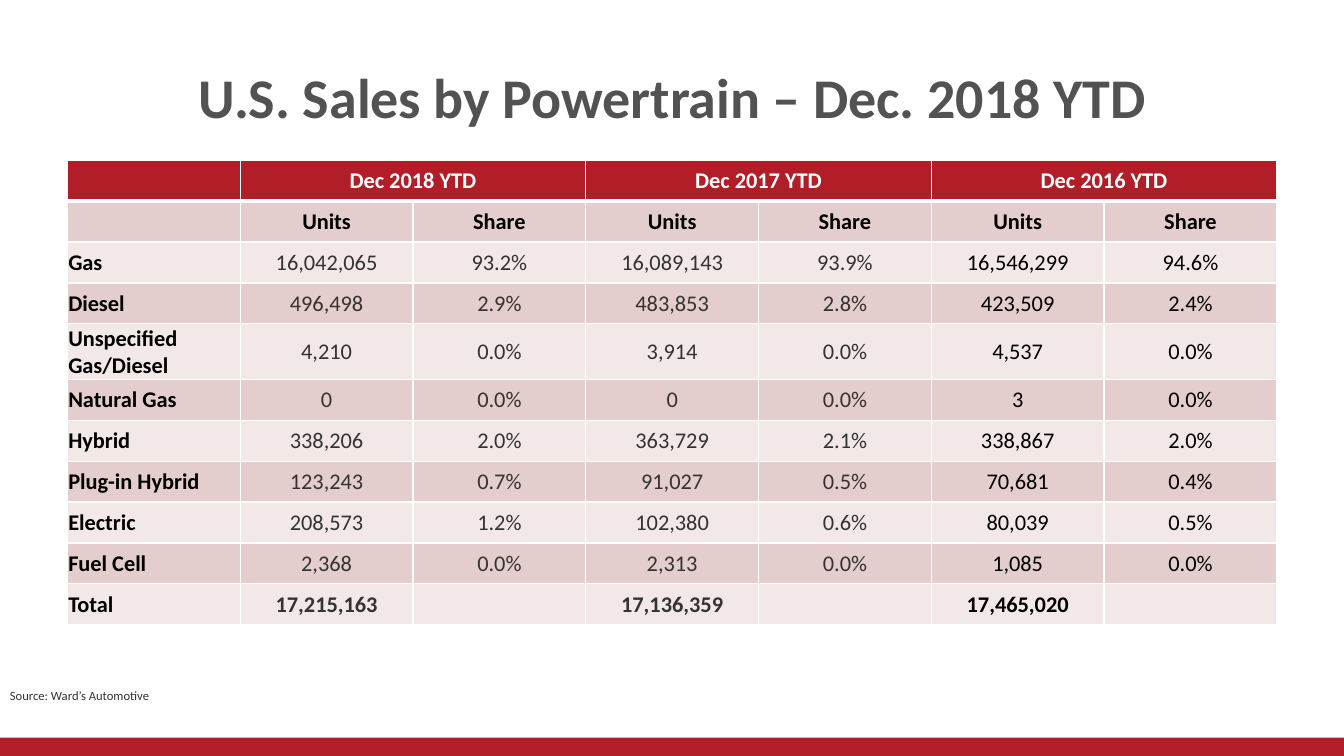
import dataclasses

import lxml.etree
import pptx
import pptx.dml.color
import pptx.enum.shapes
import pptx.enum.text
import pptx.oxml.ns
import pptx.slide
import pptx.table
import pptx.text.text
import pptx.util
from pptx.util import Cm

ALIGN = pptx.enum.text.PP_ALIGN
ANCHOR = pptx.enum.text.MSO_ANCHOR


@dataclasses.dataclass(frozen=True)
class Theme:
    font: str = "Calibri"
    red: str = "B21E28"
    dark_band: str = "E4CDCD"
    light_band: str = "F2E8E8"
    white: str = "FFFFFF"
    black: str = "000000"
    grey: str = "343333"
    title_grey: str = "525252"
    title_size: int = 40
    table_size: int = 16
    source_size: int = 9
    rule: int = 1
    header_rule: int = 3


@dataclasses.dataclass(frozen=True)
class Powertrain:
    name: str
    figures: tuple[str, ...]
    total: bool = False


THEME = Theme()
YEARS = ("Dec 2018 YTD", "Dec 2017 YTD", "Dec 2016 YTD")
MEASURES = ("Units", "Share")
POWERTRAINS = (
    Powertrain("Gas", ("16,042,065", "93.2%", "16,089,143", "93.9%", "16,546,299", "94.6%")),
    Powertrain("Diesel", ("496,498", "2.9%", "483,853", "2.8%", "423,509", "2.4%")),
    Powertrain("Unspecified Gas/Diesel", ("4,210", "0.0%", "3,914", "0.0%", "4,537", "0.0%")),
    Powertrain("Natural Gas", ("0", "0.0%", "0", "0.0%", "3", "0.0%")),
    Powertrain("Hybrid", ("338,206", "2.0%", "363,729", "2.1%", "338,867", "2.0%")),
    Powertrain("Plug-in Hybrid", ("123,243", "0.7%", "91,027", "0.5%", "70,681", "0.4%")),
    Powertrain("Electric", ("208,573", "1.2%", "102,380", "0.6%", "80,039", "0.5%")),
    Powertrain("Fuel Cell", ("2,368", "0.0%", "2,313", "0.0%", "1,085", "0.0%")),
    Powertrain("Total", ("17,215,163", "", "17,136,359", "", "17,465,020", ""), total=True),
)
LEFT, TABLE_TOP, WIDTH, ROW_HEIGHT = Cm(1.7), Cm(4.04), Cm(30.48), Cm(1.03)


def rgb(color: str) -> pptx.dml.color.RGBColor:
    return pptx.dml.color.RGBColor.from_string(color)


def style_paragraph(paragraph: pptx.text.text._Paragraph, size: int, color: str,
                    bold: bool, align: ALIGN) -> None:
    paragraph.alignment = align
    font = paragraph.font
    font.name, font.size, font.bold = THEME.font, pptx.util.Pt(size), bold
    font.color.rgb = rgb(color)


def rule_cell(cell: pptx.table._Cell, bottom: int) -> None:
    properties = cell._tc.get_or_add_tcPr()
    for side in ("lnL", "lnR", "lnT", "lnB"):
        width = bottom if side == "lnB" else THEME.rule
        line = lxml.etree.SubElement(properties, pptx.oxml.ns.qn(f"a:{side}"),
                                     w=str(pptx.util.Pt(width)))
        fill = lxml.etree.SubElement(line, pptx.oxml.ns.qn("a:solidFill"))
        lxml.etree.SubElement(fill, pptx.oxml.ns.qn("a:srgbClr"), val=THEME.white)


def fill_cell(cell: pptx.table._Cell, text: str, fill: str, color: str, bold: bool,
              align: ALIGN = ALIGN.CENTER, bottom: int = THEME.rule) -> None:
    rule_cell(cell, bottom)
    cell.fill.solid()
    cell.fill.fore_color.rgb = rgb(fill)
    cell.vertical_anchor = ANCHOR.MIDDLE
    cell.margin_left = cell.margin_right = cell.margin_top = Cm(0.02)
    cell.margin_bottom = 0
    cell.text = text
    style_paragraph(cell.text_frame.paragraphs[0], THEME.table_size, color, bold, align)


def draw_title(slide: pptx.slide.Slide) -> None:
    title = slide.shapes.title
    title.left, title.top, title.width, title.height = LEFT, Cm(1.4), WIDTH, Cm(2.03)
    title.text_frame.text = "U.S. Sales by Powertrain – Dec. 2018 YTD"
    title.text_frame.vertical_anchor = ANCHOR.MIDDLE
    style_paragraph(title.text_frame.paragraphs[0], THEME.title_size,
                    THEME.title_grey, True, ALIGN.CENTER)


def draw_sales_table(slide: pptx.slide.Slide) -> None:
    row_count = len(POWERTRAINS) + 2
    column_count = len(YEARS) * len(MEASURES) + 1
    sales = slide.shapes.add_table(row_count, column_count, LEFT, TABLE_TOP, WIDTH,
                                   ROW_HEIGHT * row_count).table
    sales.horz_banding = False
    for row in sales.rows:
        row.height = ROW_HEIGHT

    years = [""] + [text for year in YEARS for text in (year, "")]
    for column, year in enumerate(years):
        fill_cell(sales.cell(0, column), year, THEME.red, THEME.white, True,
                  bottom=THEME.header_rule)
    for column in range(1, column_count, len(MEASURES)):
        sales.cell(0, column).merge(sales.cell(0, column + len(MEASURES) - 1))

    for column, measure in enumerate(("",) + MEASURES * len(YEARS)):
        fill_cell(sales.cell(1, column), measure, THEME.dark_band, THEME.black, True)

    latest_columns = column_count - len(MEASURES)
    for row, powertrain in enumerate(POWERTRAINS, start=2):
        band = THEME.dark_band if row % 2 else THEME.light_band
        fill_cell(sales.cell(row, 0), powertrain.name, band, THEME.black, True, ALIGN.LEFT)
        for column, figure in enumerate(powertrain.figures, start=1):
            color = THEME.grey if column < latest_columns else THEME.black
            fill_cell(sales.cell(row, column), figure, band, color, powertrain.total)


def draw_source(slide: pptx.slide.Slide) -> None:
    source = slide.shapes.add_textbox(0, Cm(16.81), Cm(4.09), Cm(1.02)).text_frame
    source.word_wrap = False
    source.vertical_anchor = ANCHOR.BOTTOM
    source.text = "Source: Ward’s Automotive"
    style_paragraph(source.paragraphs[0], THEME.source_size, THEME.grey, False, ALIGN.LEFT)


def draw_footer_band(slide: pptx.slide.Slide) -> None:
    band = slide.shapes.add_shape(pptx.enum.shapes.MSO_SHAPE.RECTANGLE,
                                  Cm(-0.23), Cm(18.59), Cm(34.1), Cm(0.79))
    band.shadow.inherit = False
    band.fill.solid()
    band.fill.fore_color.rgb = rgb(THEME.red)
    band.line.fill.background()


def main() -> None:
    deck = pptx.Presentation()
    deck.slide_width, deck.slide_height = Cm(33.87), Cm(19.05)
    slide = deck.slides.add_slide(deck.slide_layouts.get_by_name("Title Only"))
    draw_footer_band(slide)
    draw_title(slide)
    draw_sales_table(slide)
    draw_source(slide)
    deck.save("out.pptx")


if __name__ == "__main__":
    main()
